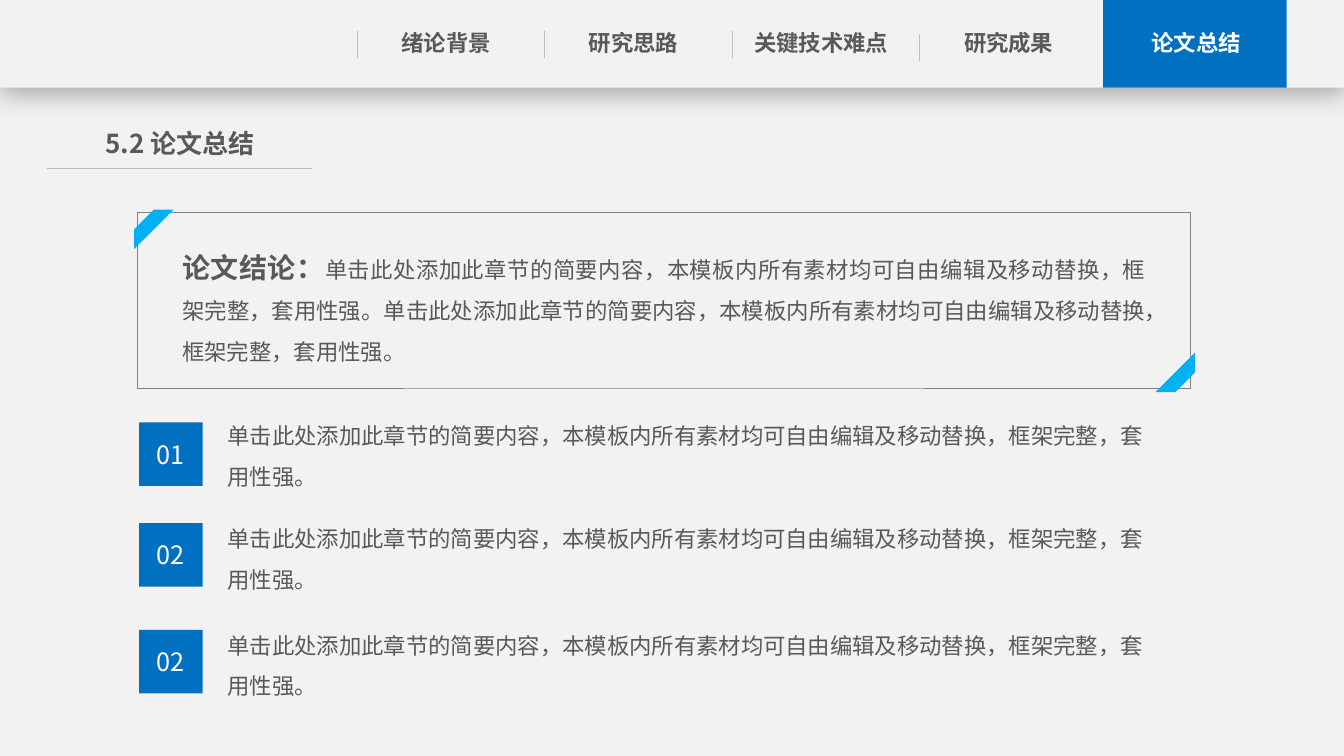
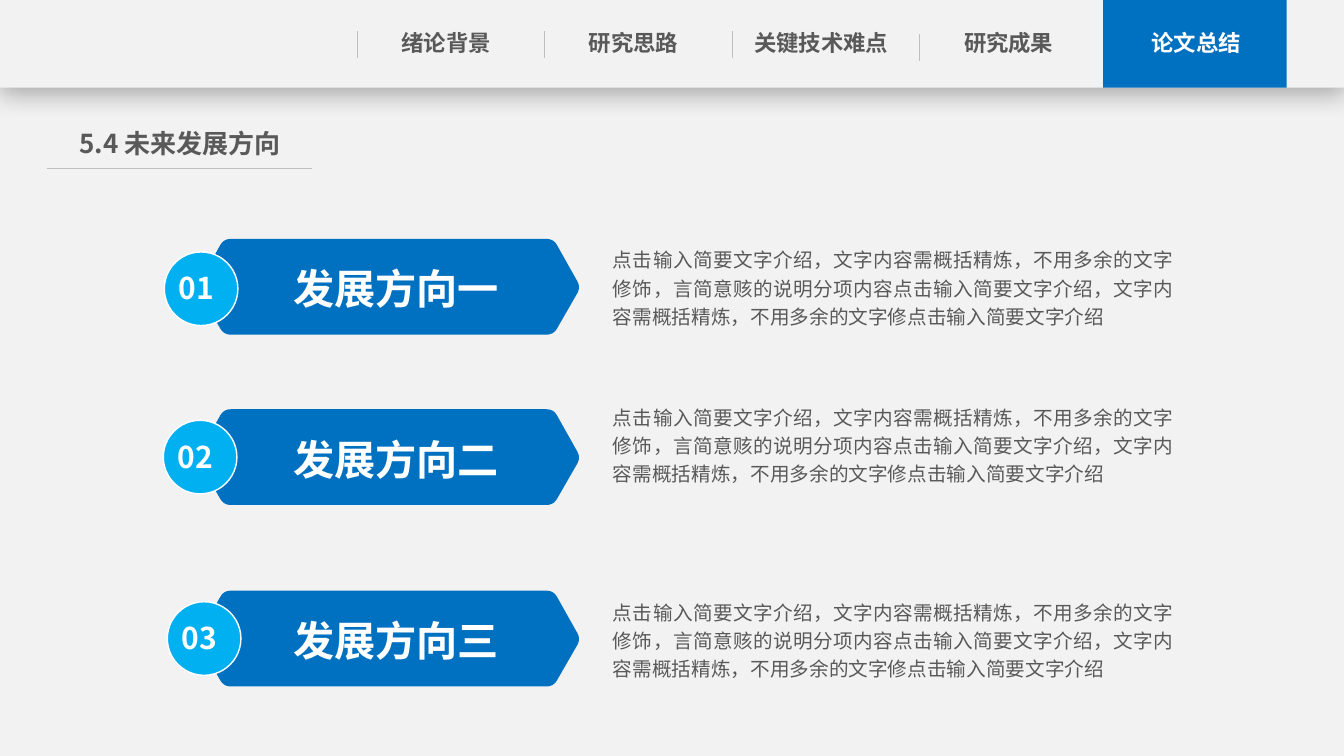
import math
from dataclasses import dataclass

from lxml import etree
from pptx import Presentation
from pptx.dml.color import RGBColor
from pptx.enum.shapes import MSO_CONNECTOR, MSO_SHAPE
from pptx.enum.text import MSO_ANCHOR, MSO_AUTO_SIZE, PP_ALIGN
from pptx.oxml.ns import qn
from pptx.util import Inches, Pt

LEFT, CENTER, JUSTIFY = PP_ALIGN.LEFT, PP_ALIGN.CENTER, PP_ALIGN.JUSTIFY
TOP, MIDDLE = MSO_ANCHOR.TOP, MSO_ANCHOR.MIDDLE
GROW = MSO_AUTO_SIZE.SHAPE_TO_FIT_TEXT
RECT, OVAL, STRIPE = MSO_SHAPE.RECTANGLE, MSO_SHAPE.OVAL, MSO_SHAPE.DIAGONAL_STRIPE
STRAIGHT = MSO_CONNECTOR.STRAIGHT

FONT = "Noto Sans CJK SC"
PAPER, WHITE, TEXT = "F2F2F2", "FFFFFF", "595959"
BLUE, SKY, RULE, FRAME = "0070C0", "00B0F0", "BFBFBF", "808080"

TABS = ["绪论背景", "研究思路", "关键技术难点", "研究成果", "论文总结"]
TAB_PITCH = 1.86
BAND_HEIGHT = 0.87
SUMMARY = "单击此处添加此章节的简要内容，本模板内所有素材均可自由编辑及移动替换，框架完整，套用性强。"
DETAIL = ("点击输入简要文字介绍，文字内容需概括精炼，不用多余的文字修饰，"
          "言简意赅的说明分项内容点击输入简要文字介绍，文字内容需概括精炼，"
          "不用多余的文字修点击输入简要文字介绍")


@dataclass
class Run:
    text: str
    size: float
    color: str = TEXT
    bold: bool = False


@dataclass
class Point:
    number: str
    box_top: float
    text_top: float


@dataclass
class Direction:
    number: str
    label: str
    arrow_top: float
    badge_left: float
    badge_top: float
    text_top: float


POINTS = [Point("01", 4.19, 4.01), Point("02", 5.19, 5.03), Point("02", 6.25, 6.09)]
DIRECTIONS = [
    Direction("01", "发展方向一", 2.37, 1.63, 2.5, 2.42),
    Direction("02", "发展方向二", 4.06, 1.62, 4.17, 3.98),
    Direction("03", "发展方向三", 5.86, 1.66, 5.97, 5.92),
]


def rgb(color: str) -> RGBColor:
    return RGBColor.from_string(color)


def write(sp, runs: list[Run], align=CENTER, anchor=TOP, spacing=None,
          insets=(0, 0, 0, 0)) -> None:
    """Fill a shape with one paragraph; insets are left, top, right, bottom."""
    tf = sp.text_frame
    tf.word_wrap = True
    tf.vertical_anchor = anchor
    for side, inset in zip(("left", "top", "right", "bottom"), insets):
        setattr(tf, f"margin_{side}", Inches(inset))
    p = tf.paragraphs[0]
    p.alignment = align
    if spacing is not None:
        p.line_spacing = spacing
    for run in runs:
        r = p.add_run()
        r.text = run.text
        r.font.color.rgb = rgb(run.color)
        style = {"name": FONT, "size": Pt(run.size), "bold": run.bold}
        for name, value in style.items():
            setattr(r.font, name, value)
        etree.SubElement(r._r.get_or_add_rPr(), qn("a:ea"), typeface=FONT)


def add_text(s, left: float, top: float, width: float, height: float,
             runs: list[Run], **layout) -> None:
    sp = s.shapes.add_textbox(Inches(left), Inches(top), Inches(width), Inches(height))
    write(sp, runs, **layout)
    sp.text_frame.auto_size = GROW


def paint(sp, fill: str | None, line: str | None = None, weight: float = 1) -> None:
    sp.shadow.inherit = False
    if fill:
        sp.fill.solid()
        sp.fill.fore_color.rgb = rgb(fill)
    else:
        sp.fill.background()
    if line:
        sp.line.color.rgb = rgb(line)
        sp.line.width = Pt(weight)
    else:
        sp.line.fill.background()


def add_box(s, kind, left: float, top: float, width: float, height: float,
            fill: str | None, line: str | None = None, weight: float = 1):
    sp = s.shapes.add_shape(kind, Inches(left), Inches(top), Inches(width), Inches(height))
    paint(sp, fill, line, weight)
    return sp


def add_rule(s, x1: float, y1: float, x2: float, y2: float) -> None:
    line = s.shapes.add_connector(STRAIGHT, Inches(x1), Inches(y1), Inches(x2), Inches(y2))
    line.line.color.rgb = rgb(RULE)
    line.line.width = Pt(0.5)
    etree.SubElement(line._element.spPr, qn("a:effectLst"))


def add_drop_shadow(sp) -> None:
    effects = sp._element.spPr.find(qn("a:effectLst"))
    shadow = etree.SubElement(effects, qn("a:outerShdw"), blurRad=str(Pt(18)),
                              dist=str(Pt(4)), dir="5400000", algn="t", rotWithShape="0")
    color = etree.SubElement(shadow, qn("a:srgbClr"), val="000000")
    etree.SubElement(color, qn("a:alpha"), val="29000")


def rounded_outline(corners: list[tuple[float, float]], cut: float,
                    steps: int = 6) -> list[tuple[float, float]]:
    """Replace each corner by a sampled quadratic curve starting cut inches before it."""
    outline = []
    for i, (x, y) in enumerate(corners):
        ends = []
        for nx, ny in (corners[i - 1], corners[(i + 1) % len(corners)]):
            share = cut / math.hypot(nx - x, ny - y)
            ends.append((x + (nx - x) * share, y + (ny - y) * share))
        (ax, ay), (bx, by) = ends
        for k in range(steps + 1):
            t = k / steps
            a, c, b = (1 - t) ** 2, 2 * t * (1 - t), t ** 2
            outline.append((a * ax + c * x + b * bx, a * ay + c * y + b * by))
    return outline


def add_arrow(s, top: float):
    middle, bottom = top + 0.48, top + 0.95
    corners = [(2.22, top), (5.49, top), (5.76, middle),
               (5.49, bottom), (2.22, bottom), (1.95, middle)]
    points = [(Inches(x), Inches(y)) for x, y in rounded_outline(corners, 0.07)]
    builder = s.shapes.build_freeform(*points[0])
    builder.add_line_segments(points[1:], close=True)
    sp = builder.convert_to_shape()
    paint(sp, BLUE)
    return sp


def add_slide(prs, title: str):
    """Add a slide with the navigation band and the section title."""
    s = prs.slides.add_slide(prs.slide_layouts[5])
    add_drop_shadow(add_box(s, RECT, 0, 0, 13.33, BAND_HEIGHT, PAPER))
    add_box(s, RECT, 10.94, 0, 1.82, BAND_HEIGHT, BLUE)
    for i, tab in enumerate(TABS):
        color = WHITE if tab == TABS[-1] else TEXT
        add_text(s, 3.69 + i * TAB_PITCH, 0.24, 1.47, 0.38, [Run(tab, 16, color, True)],
                 insets=(0, 0.05, 0, 0.05))
    for i, top in enumerate((0.31, 0.31, 0.31, 0.34)):
        x = 3.54 + i * TAB_PITCH
        add_rule(s, x, top, x, top + 0.27)

    heading = s.shapes.title
    place = {"left": 0.75, "top": 1.21, "width": 2.07, "height": 0.42}
    for name, value in place.items():
        setattr(heading, name, Inches(value))
    write(heading, [Run(title, 18.6, bold=True)], insets=(0, 0.05, 0, 0.05))
    heading.text_frame.auto_size = GROW
    add_rule(s, 0.47, 1.67, 3.09, 1.67)
    return s


def build_conclusion(prs) -> None:
    s = add_slide(prs, "5.2 论文总结")
    add_box(s, RECT, 1.36, 2.11, 10.45, 1.74, None, FRAME, 0.5)
    for left, top, angle in ((1.33, 2.08, 0), (11.46, 3.5, 180)):
        add_box(s, STRIPE, left, top, 0.39, 0.39, SKY).rotation = angle
    body = {"spacing": 1.5, "insets": (0.1, 0.05, 0.1, 0.05)}
    add_text(s, 1.71, 2.27, 9.76, 1.41,
             [Run("论文结论：", 20, bold=True), Run(SUMMARY * 2, 16)], align=JUSTIFY, **body)
    for point in POINTS:
        sp = add_box(s, RECT, 1.38, point.box_top, 0.63, 0.63, BLUE)
        write(sp, [Run(point.number, 18, WHITE)], anchor=MIDDLE)
        add_text(s, 2.16, point.text_top, 9.47, 0.91, [Run(SUMMARY, 16)], align=LEFT, **body)


def build_directions(prs) -> None:
    s = add_slide(prs, "5.4 未来发展方向")
    for item in DIRECTIONS:
        arrow = add_arrow(s, item.arrow_top)
        write(arrow, [Run(item.label, 29.4, WHITE, True)], anchor=MIDDLE,
              insets=(0.15, 0.03, 0, 0))
        badge = add_box(s, OVAL, item.badge_left, item.badge_top, 0.73, 0.73, SKY, WHITE)
        write(badge, [Run(item.number, 21.4, WHITE, True)], anchor=MIDDLE,
              insets=(0, 0, 0.09, 0.02))
        add_text(s, 6.08, item.text_top, 5.56, 0.84, [Run(DETAIL, 14)],
                 align=JUSTIFY, spacing=Pt(20))


def main() -> None:
    prs = Presentation()
    prs.slide_width, prs.slide_height = Inches(13.33), Inches(7.5)
    background = prs.slide_master.background.fill
    background.solid()
    background.fore_color.rgb = rgb(PAPER)
    build_conclusion(prs)
    build_directions(prs)
    prs.save("out.pptx")


if __name__ == "__main__":
    main()
